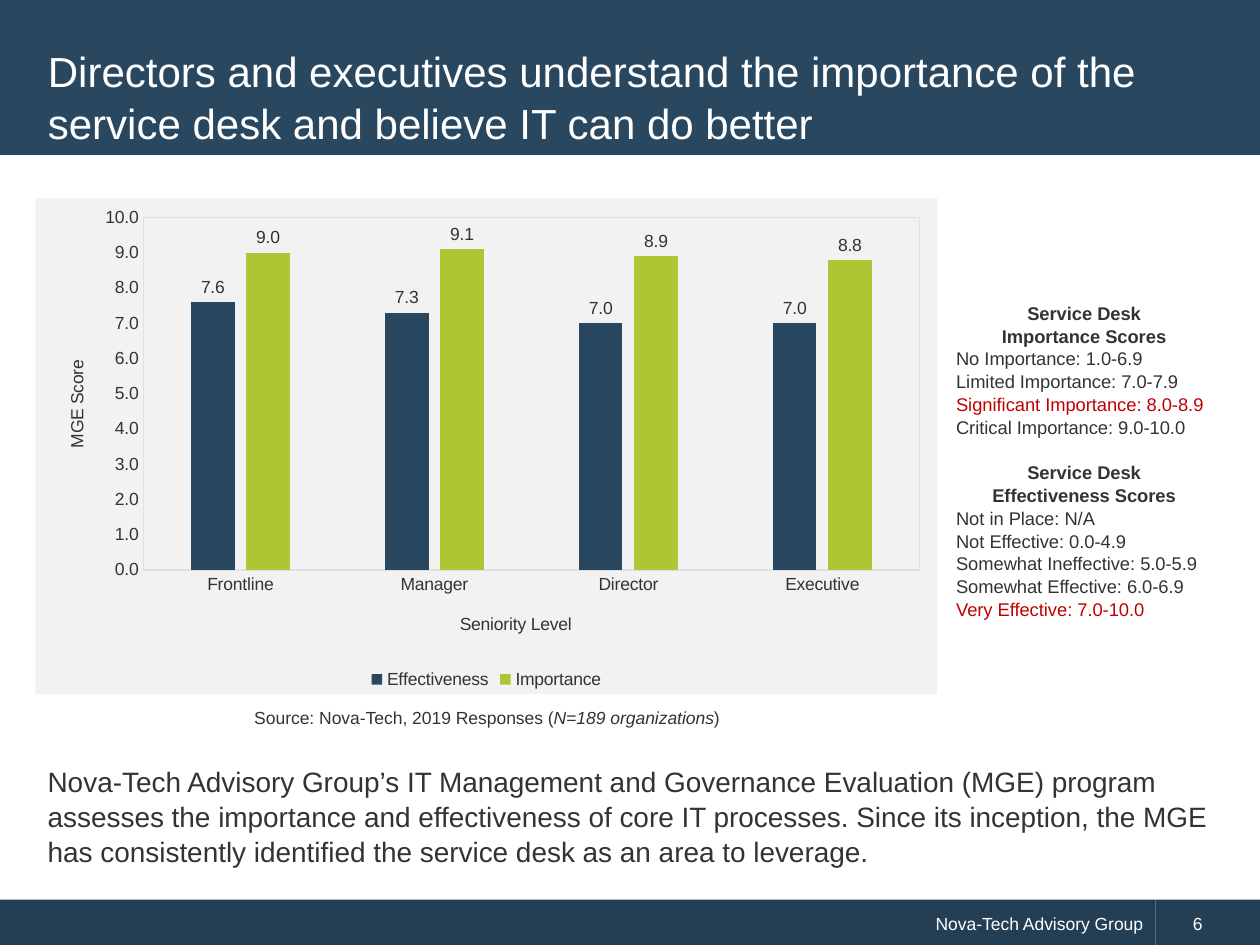
"""Build the service desk importance slide."""
from lxml import etree
from pptx import Presentation
from pptx.chart.data import CategoryChartData
from pptx.dml.color import RGBColor
from pptx.enum.chart import (XL_CHART_TYPE, XL_LABEL_POSITION,
                             XL_LEGEND_POSITION, XL_TICK_MARK)
from pptx.enum.shapes import MSO_SHAPE
from pptx.enum.text import MSO_ANCHOR, MSO_AUTO_SIZE, PP_ALIGN
from pptx.oxml import parse_xml
from pptx.oxml.ns import nsdecls, qn
from pptx.util import Inches, Pt

LEFT, CENTER, RIGHT = PP_ALIGN.LEFT, PP_ALIGN.CENTER, PP_ALIGN.RIGHT
MIDDLE = MSO_ANCHOR.MIDDLE
NO_FIT = MSO_AUTO_SIZE.NONE
RECT = MSO_SHAPE.RECTANGLE
COLUMNS = XL_CHART_TYPE.COLUMN_CLUSTERED
OUTSIDE_END = XL_LABEL_POSITION.OUTSIDE_END
BOTTOM = XL_LEGEND_POSITION.BOTTOM
NO_TICK = XL_TICK_MARK.NONE

NAVY, FOOTER, LIME = "29475F", "243F54", "B0C534"
INK, WHITE, RED, PANEL, RULE = "333333", "FFFFFF", "C00000", "F2F2F2", "E0E0E0"

TITLE = ("Directors and executives understand the importance of the "
         "service desk and believe IT can do better")
SUMMARY = ("Nova-Tech Advisory Group’s IT Management and Governance Evaluation "
           "(MGE) program assesses the importance and effectiveness of core IT "
           "processes. Since its inception, the MGE has consistently identified "
           "the service desk as an area to leverage.")
CATEGORIES = ["Frontline", "Manager", "Director", "Executive"]
SERIES = [("Effectiveness", [7.6, 7.3, 7.0, 7.0], NAVY),
          ("Importance", [9.0, 9.1, 8.9, 8.8], LIME)]
SCORES = [
    ("Importance Scores", "Significant Importance: 8.0-8.9",
     ["No Importance: 1.0-6.9", "Limited Importance: 7.0-7.9",
      "Significant Importance: 8.0-8.9", "Critical Importance: 9.0-10.0"]),
    ("Effectiveness Scores", "Very Effective: 7.0-10.0",
     ["Not in Place: N/A", "Not Effective: 0.0-4.9",
      "Somewhat Ineffective: 5.0-5.9", "Somewhat Effective: 6.0-6.9",
      "Very Effective: 7.0-10.0"]),
]


def rgb(value):
    """Return the colour for a hex string."""
    return RGBColor.from_string(value)


def set_font(font, size=10, color=INK, bold=False, italic=False):
    """Apply the deck typeface and a format to a font."""
    font.name, font.size = "Arial", Pt(size)
    font.bold, font.italic = bold, italic
    font.color.rgb = rgb(color)


def add_run(p, text, **fmt):
    """Add formatted text to a paragraph."""
    r = p.add_run()
    r.text = text
    set_font(r.font, **fmt)


def add_text(tf, text, align=LEFT, indent=0, before=0, spacing=1.04, **fmt):
    """Add a formatted paragraph, filling the empty first one if there is one."""
    p = tf.paragraphs[0]
    if p.runs:
        p = tf.add_paragraph()
    p.alignment, p.space_before, p.line_spacing = align, Pt(before), spacing
    if indent:
        p._p.get_or_add_pPr().set("marL", str(Inches(indent)))
    add_run(p, text, **fmt)
    return p


def place(parent, index, x, y, w=None, h=None):
    """Give a chart part a manual layout in fractions of the chart."""
    for old in parent.findall(qn("c:layout")):
        parent.remove(old)
    layout = parse_xml(f"<c:layout {nsdecls('c')}><c:manualLayout/></c:layout>")
    values = [("xMode", "edge"), ("yMode", "edge"), ("x", x), ("y", y)]
    if w:
        values = [("layoutTarget", "inner"), *values, ("w", w), ("h", h)]
    for tag, value in values:
        etree.SubElement(layout[0], qn(f"c:{tag}")).set("val", str(value))
    parent.insert(index, layout)


class Deck:
    """Hold the style and the current slide."""

    def __init__(self):
        """Open a blank slide of the right size."""
        self.prs = Presentation()
        self.prs.slide_width, self.prs.slide_height = Inches(10), Inches(7.5)
        self.slide = self.prs.slides.add_slide(self.prs.slide_layouts[5])
        self.shapes = self.slide.shapes

    def band(self, x, y, w, h, color):
        """Add a plain bar behind the title and return its text frame."""
        sp = self.shapes.add_shape(RECT, *map(Inches, (x, y, w, h)))
        sp.shadow.inherit = False
        sp.fill.solid()
        sp.fill.fore_color.rgb = rgb(color)
        sp.line.fill.background()
        self.shapes._spTree.insert(2, sp._element)
        sp.text_frame.vertical_anchor = MIDDLE
        return sp.text_frame

    def title(self, text, x, y, w, h):
        """Fill and place the title placeholder."""
        sp = self.shapes.title
        sp.left, sp.top, sp.width, sp.height = map(Inches, (x, y, w, h))
        tf = sp.text_frame
        tf.word_wrap, tf.auto_size, tf.vertical_anchor = True, NO_FIT, MIDDLE
        add_text(tf, text, size=24, color=WHITE)

    def textbox(self, x, y, w, h):
        """Add a wrapping text box and return its text frame."""
        tf = self.shapes.add_textbox(*map(Inches, (x, y, w, h))).text_frame
        tf.word_wrap = True
        return tf

    def chart(self, x, y, w, h):
        """Add the clustered column chart of scores."""
        data = CategoryChartData(number_format="0.0")
        data.categories = CATEGORIES
        for name, values, _ in SERIES:
            data.add_series(name, values)
        chart = self.shapes.add_chart(
            COLUMNS, *map(Inches, (x, y, w, h)), data).chart
        set_font(chart.font)
        chart.has_title = False
        chart.has_legend = True
        chart.legend.position = BOTTOM
        chart.legend.include_in_layout = False
        set_font(chart.legend.font)
        self.plot(chart.plots[0])
        self.axis(chart.category_axis, "Seniority Level", 0.467, 0.83)
        self.axis(chart.value_axis, "MGE Score", 0.03, 0.32)
        chart.category_axis.format.line.color.rgb = rgb(RULE)
        chart.category_axis.format.line.width = Pt(0.75)
        value_axis = chart.value_axis
        value_axis.format.line.fill.background()
        value_axis.minimum_scale, value_axis.maximum_scale = 0, 10
        value_axis.major_unit = 1
        value_axis.tick_labels.number_format = "0.0"
        value_axis.tick_labels.number_format_is_linked = False
        area = chart._chartSpace.chart.plotArea
        place(area, 0, 0.12, 0.04, 0.86, 0.71)
        area.append(parse_xml(
            f"<c:spPr {nsdecls('c', 'a')}><a:noFill/><a:ln w='9525'><a:solidFill>"
            f"<a:srgbClr val='{RULE}'/></a:solidFill></a:ln></c:spPr>"))
        chart._chartSpace.chart.addnext(parse_xml(
            f"<c:spPr {nsdecls('c', 'a')}><a:solidFill><a:srgbClr val='{PANEL}'/>"
            "</a:solidFill><a:ln><a:noFill/></a:ln></c:spPr>"))

    def plot(self, plot):
        """Colour and label the columns."""
        plot.gap_width, plot.overlap = 219, -27
        plot.vary_by_categories = False
        for series, (_, _, color) in zip(plot.series, SERIES):
            series.format.fill.solid()
            series.format.fill.fore_color.rgb = rgb(color)
            labels = series.data_labels
            labels.show_value, labels.position = True, OUTSIDE_END
            labels.number_format = "0.0"
            labels.number_format_is_linked = False
            set_font(labels.font)

    def axis(self, axis, text, x, y):
        """Format an axis and place its title."""
        axis.has_major_gridlines = False
        axis.major_tick_mark = axis.minor_tick_mark = NO_TICK
        set_font(axis.tick_labels.font)
        add_text(axis.axis_title.text_frame, text, align=CENTER, spacing=1.0)
        place(axis.axis_title._element, 1, x, y)


def main():
    """Compose and save the slide."""
    deck = Deck()
    deck.band(0, 0, 10, 1.23, NAVY)
    add_text(deck.band(0, 7.14, 9.17, 0.37, FOOTER),
             "Nova-Tech Advisory Group", align=RIGHT, color=WHITE)
    add_text(deck.band(9.17, 7.14, 0.83, 0.37, FOOTER), "6",
             indent=0.2, color=WHITE)
    deck.title(TITLE, 0.28, 0.28, 9.43, 0.96)
    add_text(deck.textbox(0.28, 6.01, 9.43, 0.91), SUMMARY, size=16)

    tf = deck.textbox(7.37, 2.34, 2.47, 2.57)
    for i, (heading, highlight, levels) in enumerate(SCORES):
        add_text(tf, "Service Desk", align=CENTER, before=12.6 * i,
                 size=10.5, bold=True)
        add_text(tf, heading, align=CENTER, size=10.5, bold=True)
        for level in levels:
            add_text(tf, level, indent=0.12, size=10.5,
                     color=RED if level == highlight else INK)

    deck.chart(0.28, 1.57, 7.16, 3.94)
    p = add_text(deck.textbox(1.79, 5.56, 4.15, 0.27),
                 "Source: Nova-Tech, 2019 Responses (", align=CENTER)
    add_run(p, "N=189 organizations", italic=True)
    add_run(p, ")")
    deck.prs.save("out.pptx")


if __name__ == "__main__":
    main()
